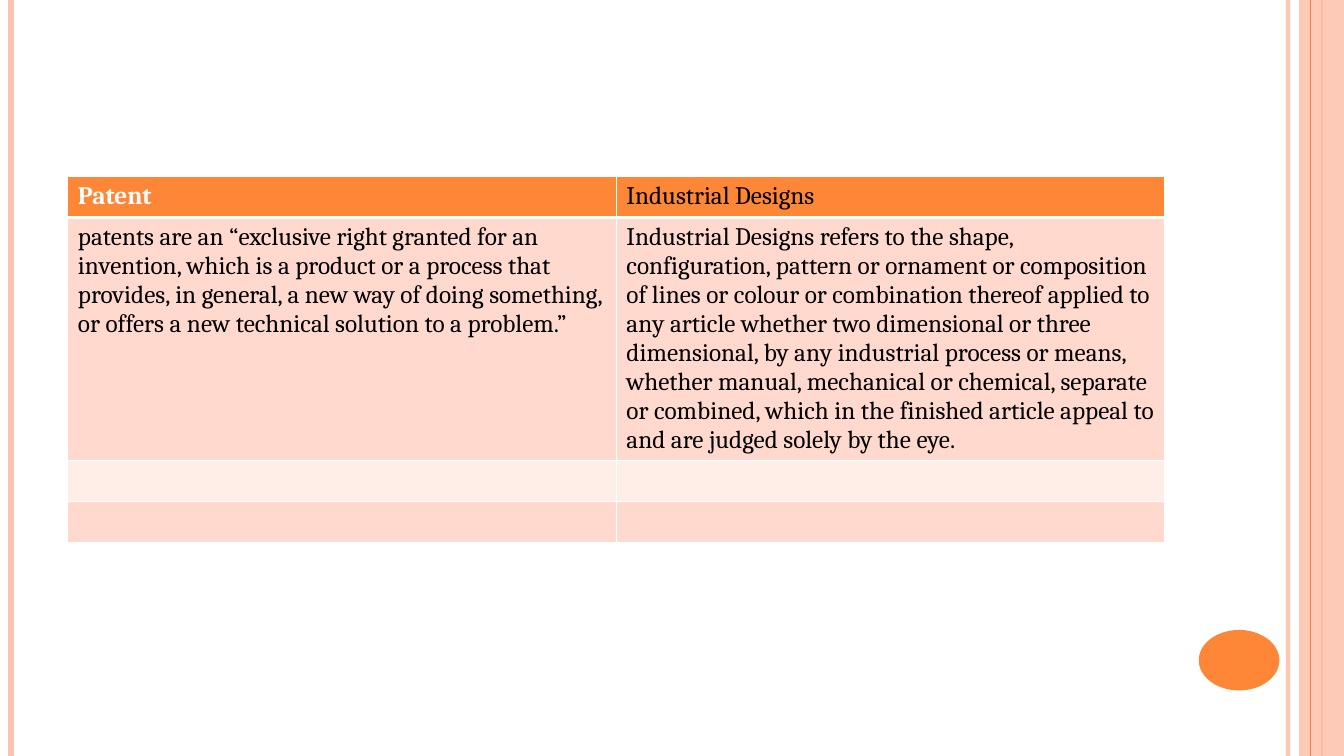
from lxml import etree
from pptx import Presentation
from pptx.dml.color import RGBColor
from pptx.enum.shapes import MSO_CONNECTOR, MSO_SHAPE
from pptx.oxml.ns import qn
from pptx.util import Pt

STRAIGHT = MSO_CONNECTOR.STRAIGHT
RECTANGLE = MSO_SHAPE.RECTANGLE
OVAL = MSO_SHAPE.OVAL

WHITE = RGBColor(0xFF, 0xFF, 0xFF)
BLACK = RGBColor(0x00, 0x00, 0x00)
ORANGE = RGBColor(0xFE, 0x86, 0x37)
PEACH = RGBColor(0xFE, 0xC3, 0xAE)
BAND_DARK = RGBColor(0xFF, 0xD9, 0xCE)
BAND_LIGHT = RGBColor(0xFF, 0xED, 0xE8)

FONT = "Cambria"
WIDTH, HEIGHT = 960, 540
ROW_HEIGHTS = (29.2, 173.6, 29.2, 29.2)
ROW_FILLS = (ORANGE, BAND_DARK, BAND_LIGHT, BAND_DARK)
ROWS = (
    ("Patent", "Industrial Designs"),
    (
        "patents are an “exclusive right granted for an invention, which is a "
        "product or a process that provides, in general, a new way of doing "
        "something, or offers a new technical solution to a problem.” ",
        "Industrial Designs refers to the shape, configuration, pattern or "
        "ornament or composition of lines or colour or combination thereof "
        "applied to any article whether two dimensional or three dimensional, "
        "by any industrial process or means, whether manual, mechanical or "
        "chemical, separate or combined, which in the finished article appeal "
        "to and are judged solely by the eye. ",
    ),
    ("", ""),
    ("", ""),
)


def set_alpha(element, percent):
    color = next(element.iter(qn("a:srgbClr")))
    etree.SubElement(color, qn("a:alpha"), val=str(percent * 1000))


def add_stripe(s, x, color, width, alpha=100):
    line = s.shapes.add_connector(STRAIGHT, Pt(x), Pt(0), Pt(x), Pt(HEIGHT))
    line.line.color.rgb = color
    line.line.width = Pt(width)
    sp_pr = line._element.spPr
    etree.SubElement(sp_pr, qn("a:effectLst"))
    if alpha < 100:
        set_alpha(sp_pr, alpha)


def add_filled(s, kind, left, top, width, height, color, alpha=100):
    sp = s.shapes.add_shape(kind, Pt(left), Pt(top), Pt(width), Pt(height))
    sp.shadow.inherit = False
    sp.fill.solid()
    sp.fill.fore_color.rgb = color
    sp.line.fill.background()
    if alpha < 100:
        set_alpha(sp._element.spPr, alpha)


def set_borders(cell, top, bottom):
    tc_pr = cell._tc.get_or_add_tcPr()
    widths = (("a:lnL", 1), ("a:lnR", 1), ("a:lnT", top), ("a:lnB", bottom))
    for index, (tag, width) in enumerate(widths):
        ln = etree.Element(qn(tag), w=str(Pt(width)))
        fill = etree.SubElement(ln, qn("a:solidFill"))
        etree.SubElement(fill, qn("a:srgbClr"), val=str(WHITE))
        tc_pr.insert(index, ln)


def fill_cell(cell, text, fill, color, bold):
    cell.fill.solid()
    cell.fill.fore_color.rgb = fill
    cell.text = text
    p = cell.text_frame.paragraphs[0]
    p.font.name = FONT
    p.font.size = Pt(18)
    p.font.bold = bold
    p.font.color.rgb = color


def add_comparison(s):
    frame = s.shapes.add_table(
        len(ROWS), 2, Pt(48.5), Pt(126.2), Pt(783.6), Pt(sum(ROW_HEIGHTS))
    )
    table = frame.table
    for i, texts in enumerate(ROWS):
        table.rows[i].height = Pt(ROW_HEIGHTS[i])
        for j, text in enumerate(texts):
            cell = table.cell(i, j)
            heading = i == 0 and j == 0
            color = WHITE if heading else BLACK
            fill_cell(cell, text, ROW_FILLS[i], color, heading)
            set_borders(cell, 3 if i == 1 else 1, 3 if i == 0 else 1)


def main():
    prs = Presentation()
    prs.slide_width, prs.slide_height = Pt(WIDTH), Pt(HEIGHT)
    s = prs.slides.add_slide(prs.slide_layouts[6])
    s.background.fill.solid()
    s.background.fill.fore_color.rgb = WHITE
    add_stripe(s, 920, PEACH, 3, 93)
    add_stripe(s, 8, PEACH, 4.5)
    add_stripe(s, 944, ORANGE, 1.5)
    add_filled(s, RECTANGLE, 928, 0, 32, HEIGHT, PEACH, 87)
    add_stripe(s, 936, ORANGE, 0.75)
    add_filled(s, OVAL, 856.3, 450, 57.6, 43.2, ORANGE)
    add_comparison(s)
    prs.save("out.pptx")


if __name__ == "__main__":
    main()
